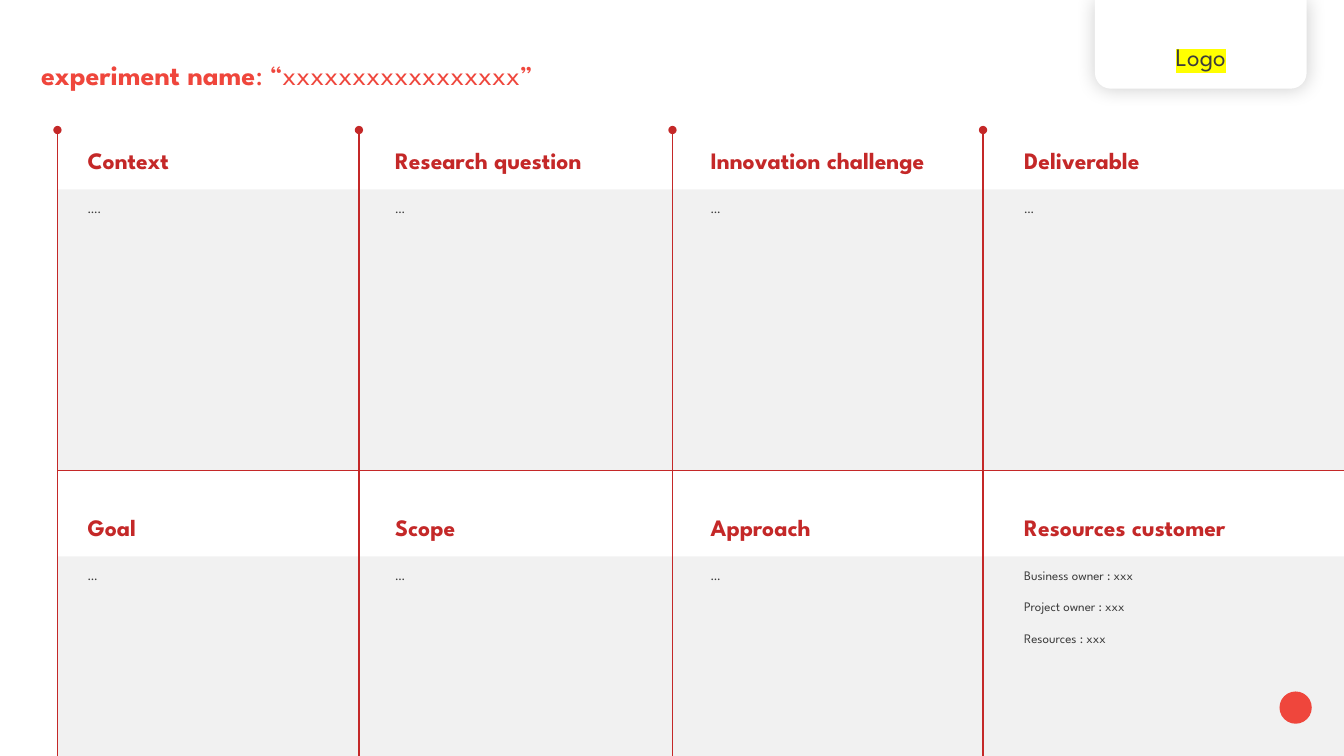
from lxml import etree
from pptx import Presentation
from pptx.dml.color import RGBColor
from pptx.enum.shapes import MSO_CONNECTOR, MSO_SHAPE
from pptx.enum.text import MSO_ANCHOR, PP_ALIGN
from pptx.oxml.ns import qn
from pptx.util import Inches, Pt

RECTANGLE = MSO_SHAPE.RECTANGLE
ROUNDED_BOTTOM = MSO_SHAPE.ROUND_2_SAME_RECTANGLE
OVAL = MSO_SHAPE.OVAL
STRAIGHT = MSO_CONNECTOR.STRAIGHT
MIDDLE = MSO_ANCHOR.MIDDLE
BOTTOM = MSO_ANCHOR.BOTTOM
CENTER = PP_ALIGN.CENTER

FONT = "League Spartan"
COLORS = {
    "white": "FFFFFF", "panel": "E5E5E5", "title": "EF463C", "accent": "C42828",
    "body": "3C3C3C", "highlight": "FFFF00", "shadow": "000000",
}
WIDTH, HEIGHT = 13.33, 7.5
GRID_LEFT, GRID_TOP = 0.57, 1.29
DIVIDERS = [GRID_LEFT, 3.56, 6.67, 9.75]
TEXT_LEFTS = [0.77, 3.82, 6.95, 10.06]
TEXT_WIDTH = 3.15
ROWS = [
    (1.88, 2.79, [
        ("Context", ["…."]),
        ("Research question", ["…"]),
        ("Innovation challenge", ["…"]),
        ("Deliverable", ["…"]),
    ]),
    (5.52, 1.98, [
        ("Goal", ["…"]),
        ("Scope", ["…"]),
        ("Approach", ["…"]),
        ("Resources customer",
         ["Business owner : xxx", "Project owner : xxx", "Resources : xxx"]),
    ]),
]


def rgb(name):
    """Return the named colour."""
    return RGBColor.from_string(COLORS[name])


def style_font(font, size, color, bold=False):
    """Set the face, size, colour and weight of a font."""
    font.name = FONT
    font.size = Pt(size)
    font.bold = bold
    font.color.rgb = rgb(color)


def add_plain_shape(slide, kind, box, color):
    """Add a filled shape without outline or shadow."""
    shape = slide.shapes.add_shape(kind, *map(Inches, box))
    shape.shadow.inherit = False
    shape.fill.solid()
    shape.fill.fore_color.rgb = rgb(color)
    shape.line.fill.background()
    return shape


def add_text(slide, box, lines, size, color, bold=False, gap=0):
    """Add a wrapped text box with one paragraph per line."""
    frame = slide.shapes.add_textbox(*map(Inches, box)).text_frame
    frame.word_wrap = True
    frame.text = "\n".join(lines)
    for index, paragraph in enumerate(frame.paragraphs):
        if index:
            paragraph.space_before = Pt(gap)
        for run in paragraph.runs:
            style_font(run.font, size, color, bold)
    return frame


def add_rule(slide, start, end, dotted=False):
    """Draw a thin red rule, with a dot at its start if wanted."""
    rule = slide.shapes.add_connector(STRAIGHT, *map(Inches, start + end))
    rule.line.color.rgb = rgb("accent")
    rule.line.width = Pt(1)
    if dotted:
        etree.SubElement(rule.line._get_or_add_ln(), qn("a:headEnd"), type="oval")
    etree.SubElement(rule._element.spPr, qn("a:effectLst"))


def add_title(slide, box):
    """Write the experiment name in bold and its value in regular weight."""
    frame = add_text(slide, box, ["experiment name"], 20, "title", bold=True)
    frame.vertical_anchor = MIDDLE
    paragraph = frame.paragraphs[0]
    paragraph.line_spacing = 0.9
    value = paragraph.add_run()
    value.text = ": “xxxxxxxxxxxxxxxxx”"
    style_font(value.font, 20, "title")


def add_row(slide, box, cells):
    """Place a shaded band with a heading above and a body text in each column."""
    top = box[1]
    panel = add_plain_shape(slide, RECTANGLE, box, "panel")
    color = panel.fill._xPr.find(qn("a:solidFill"))[0]
    etree.SubElement(color, qn("a:alpha"), val="50000")
    for left, (heading, lines) in zip(TEXT_LEFTS, cells):
        add_text(slide, (left, top - 0.48, TEXT_WIDTH, 0.38), [heading],
                 16.8, "accent", bold=True)
        add_text(slide, (left, top + 0.06, TEXT_WIDTH, 0.26), lines,
                 9.3, "body", gap=11.2)


def add_grid_lines(slide, left, top, right, bottom, middle):
    """Draw the dotted column rules and the rule between the rows."""
    for divider in DIVIDERS:
        add_rule(slide, (divider, top), (divider, bottom), dotted=True)
    add_rule(slide, (right, middle), (left, middle))


def add_logo_card(slide, box):
    """Place the white card with a soft shadow and a highlighted label."""
    card = add_plain_shape(slide, ROUNDED_BOTTOM, box, "white")
    card.adjustments[0] = 0
    card.adjustments[1] = 0.18
    effects = card._element.spPr.find(qn("a:effectLst"))
    shadow = etree.SubElement(effects, qn("a:outerShdw"), blurRad=str(Pt(14)),
                              dist="0", dir="2700000", algn="ctr", rotWithShape="0")
    color = etree.SubElement(shadow, qn("a:srgbClr"), val=COLORS["shadow"])
    etree.SubElement(color, qn("a:alpha"), val="20000")
    frame = card.text_frame
    frame.text = "Logo"
    frame.vertical_anchor = BOTTOM
    frame.margin_top = Inches(0.41)
    frame.margin_left = frame.margin_right = frame.margin_bottom = Inches(0.12)
    paragraph = frame.paragraphs[0]
    paragraph.alignment = CENTER
    font = paragraph.runs[0].font
    style_font(font, 18, "body")
    highlight = etree.Element(qn("a:highlight"))
    etree.SubElement(highlight, qn("a:srgbClr"), val=COLORS["highlight"])
    font._element.find(qn("a:solidFill")).addnext(highlight)


def main():
    """Build and save the experiment canvas."""
    presentation = Presentation()
    presentation.slide_width = Inches(WIDTH)
    presentation.slide_height = Inches(HEIGHT)
    slide = presentation.slides.add_slide(presentation.slide_layouts[6])
    for top, height, cells in ROWS:
        add_row(slide, (GRID_LEFT, top, WIDTH - GRID_LEFT, height), cells)
    add_title(slide, (0.31, 0.32, 10, 0.88))
    add_logo_card(slide, (10.86, 0, 2.1, 0.88))
    add_plain_shape(slide, OVAL, (12.69, 6.86, 0.32, 0.32), "title")
    add_grid_lines(slide, GRID_LEFT, GRID_TOP, WIDTH, HEIGHT, 4.67)
    presentation.save("out.pptx")


if __name__ == "__main__":
    main()
